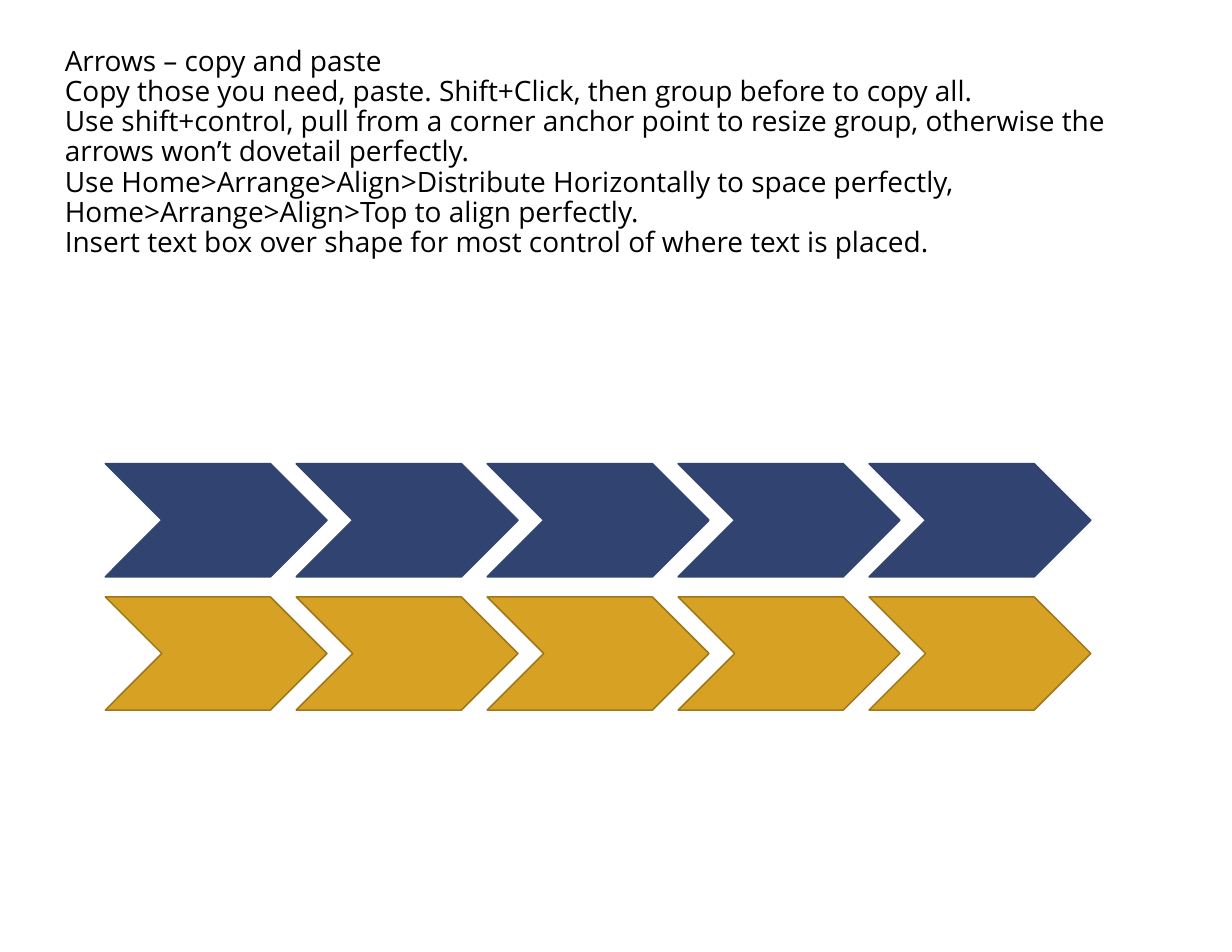
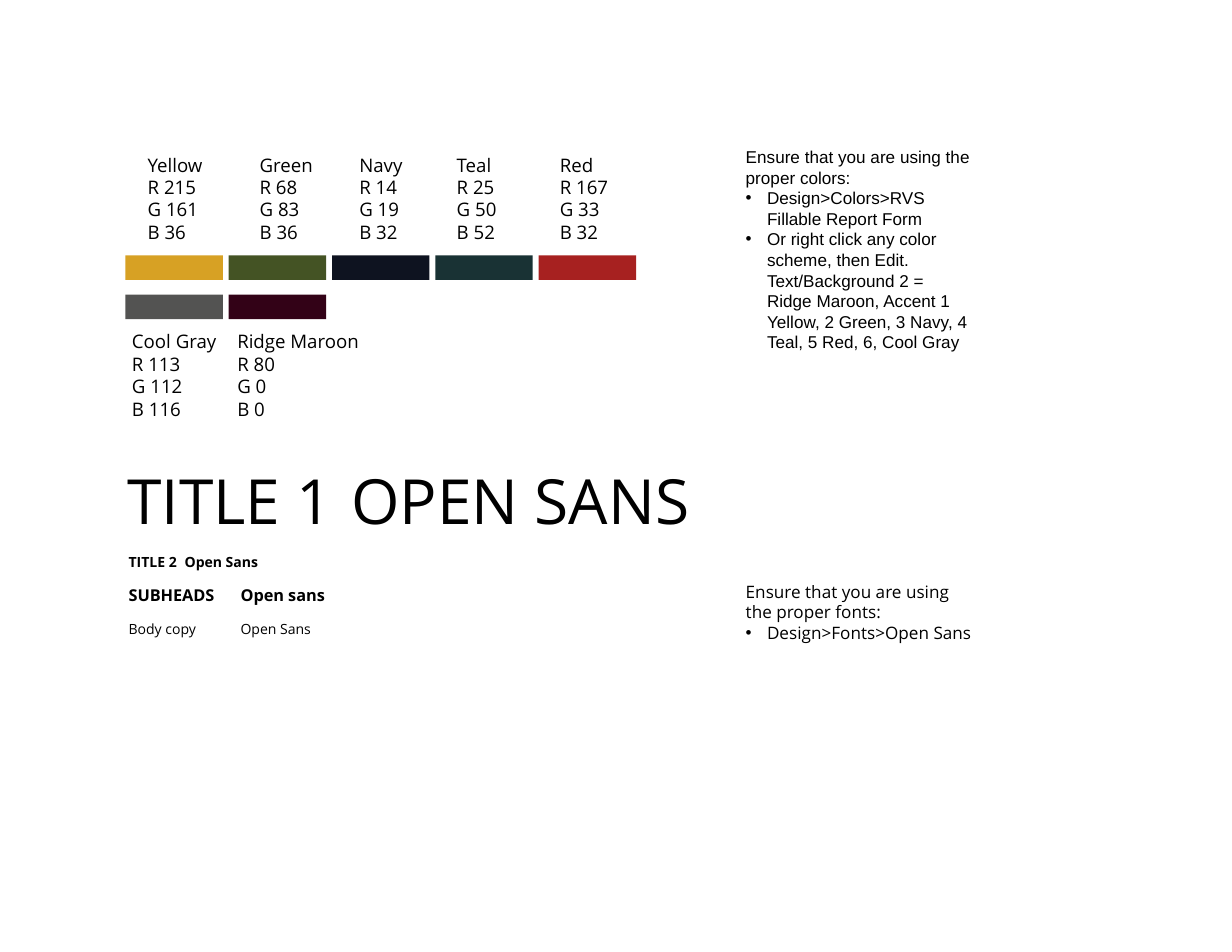
from lxml import etree
from pptx import Presentation
from pptx.dml.color import RGBColor
from pptx.enum import shapes, text
from pptx.oxml import ns
from pptx.util import Inches, Pt

BLACK = RGBColor(0x00, 0x00, 0x00)
GOLD = RGBColor(0xD7, 0xA1, 0x24)
BRONZE = RGBColor(0x9F, 0x77, 0x1B)
BLUE = RGBColor(0x31, 0x43, 0x71)
GREEN = RGBColor(0x44, 0x53, 0x24)
NAVY = RGBColor(0x0E, 0x13, 0x20)
TEAL = RGBColor(0x19, 0x32, 0x34)
RED = RGBColor(0xA7, 0x21, 0x20)
GRAY = RGBColor(0x53, 0x53, 0x52)
MAROON = RGBColor(0x33, 0x02, 0x17)
FONT = "Open Sans"


def write(page, lines, left, top, wide, high, size=12, font=FONT, bold=False,
          wrap=True, grow=True, space=None, bullets=False, tab=None):
    box = page.shapes.add_textbox(Inches(left), Inches(top), Inches(wide), Inches(high))
    frame = box.text_frame
    frame.word_wrap = wrap
    if grow:
        frame.auto_size = text.MSO_AUTO_SIZE.SHAPE_TO_FIT_TEXT
    for i, line in enumerate(lines):
        para = frame.add_paragraph() if i else frame.paragraphs[0]
        if space:
            para.line_spacing = space
        run = para.add_run()
        run.text = line
        run.font.size = Pt(size)
        run.font.name = font
        run.font.bold = bold
        run.font.color.rgb = BLACK
        if bullets and i:
            props = para._p.get_or_add_pPr()
            props.set("marL", str(Inches(0.19)))
            props.set("indent", str(-Inches(0.19)))
            etree.SubElement(props, ns.qn("a:buFont")).set("typeface", "Arial")
            etree.SubElement(props, ns.qn("a:buChar")).set("char", "•")
        if tab:
            stops = etree.SubElement(para._p.get_or_add_pPr(), ns.qn("a:tabLst"))
            stop = etree.SubElement(stops, ns.qn("a:tab"))
            stop.set("pos", str(Inches(tab)))
            stop.set("algn", "l")


def draw(page, kind, left, top, wide, high, fill, line=None):
    shape = page.shapes.add_shape(kind, Inches(left), Inches(top), Inches(wide), Inches(high))
    shape.shadow.inherit = False
    shape.fill.solid()
    shape.fill.fore_color.rgb = fill
    if line is None:
        shape.line.fill.background()
    else:
        shape.line.color.rgb = line
        shape.line.width = Pt(1)


deck = Presentation()
deck.slide_width = Inches(11)
deck.slide_height = Inches(8.5)
blank = deck.slide_layouts[6]

arrows = deck.slides.add_slide(blank)
write(arrows, [
    "Arrows – copy and paste",
    "Copy those you need, paste. Shift+Click, then group before to copy all.",
    "Use shift+control, pull from a corner anchor point to resize group, "
    "otherwise the arrows won’t dovetail perfectly.",
    "Use Home>Arrange>Align>Distribute Horizontally to space perfectly, "
    "Home>Arrange>Align>Top to align perfectly.",
    "Insert text box over shape for most control of where text is placed.",
], 0.48, 0.37, 10.12, 2.68, size=18, grow=False, space=0.9)

step = (7.76 - 0.94) / 4
for col in range(5):
    for top, fill, line in [(5.33, GOLD, BRONZE), (4.14, BLUE, BLUE)]:
        draw(arrows, shapes.MSO_SHAPE.CHEVRON, 0.94 + col * step, top, 1.98, 1.01, fill, line)

styles = deck.slides.add_slide(blank)
upper = [
    ("Yellow", (215, 161, 36), GOLD, 1.22, 0.72),
    ("Green", (68, 83, 36), GREEN, 2.22, 0.7),
    ("Navy", (14, 19, 32), NAVY, 3.11, 0.62),
    ("Teal", (25, 50, 52), TEAL, 3.98, 0.6),
    ("Red", (167, 33, 32), RED, 4.9, 0.68),
]
lower = [
    ("Cool Gray", (113, 112, 116), GRAY, 1.08, 0.98),
    ("Ridge Maroon", (80, 0, 0), MAROON, 2.02, 1.32),
]
step = (4.81 - 1.12) / 4
for row, top, label in [(upper, 2.28, 1.32), (lower, 2.63, 2.9)]:
    for col, (name, mix, fill, left, wide) in enumerate(row):
        draw(styles, shapes.MSO_SHAPE.RECTANGLE, 1.12 + col * step, top, 0.87, 0.22, fill)
        lines = [name] + [f"{key} {part}" for key, part in zip("RGB", mix)]
        write(styles, lines, left, label, wide, 0.91)

write(styles, ["TITLE 1 \tOPEN SANS"], 1.04, 4.08, 7.74, 0.77, size=40)
write(styles, ["TITLE 2\tOpen Sans"], 1.05, 4.89, 2.09, 0.25, size=9, bold=True, tab=0.5)
write(styles, ["SUBHEADS\tOpen sans"], 1.05, 5.18, 2.82, 0.28, size=10.5, bold=True)
write(styles, ["Body copy\tOpen Sans"], 1.05, 5.49, 2.46, 0.25, size=9)

write(styles, [
    "Ensure that you are using the proper colors:",
    "Design>Colors>RVS Fillable Report Form",
    "Or right click any color scheme, then Edit. Text/Background 2 = Ridge Maroon, "
    "Accent 1 Yellow, 2 Green, 3 Navy, 4 Teal, 5 Red, 6, Cool Gray",
], 6.56, 1.26, 2.22, 1.95, size=11, font="Arial", bullets=True)
write(styles, [
    "Ensure that you are using the proper fonts:",
    "Design>Fonts>Open Sans",
], 6.56, 5.14, 2.22, 0.66, size=11, bullets=True)

deck.save("out.pptx")
